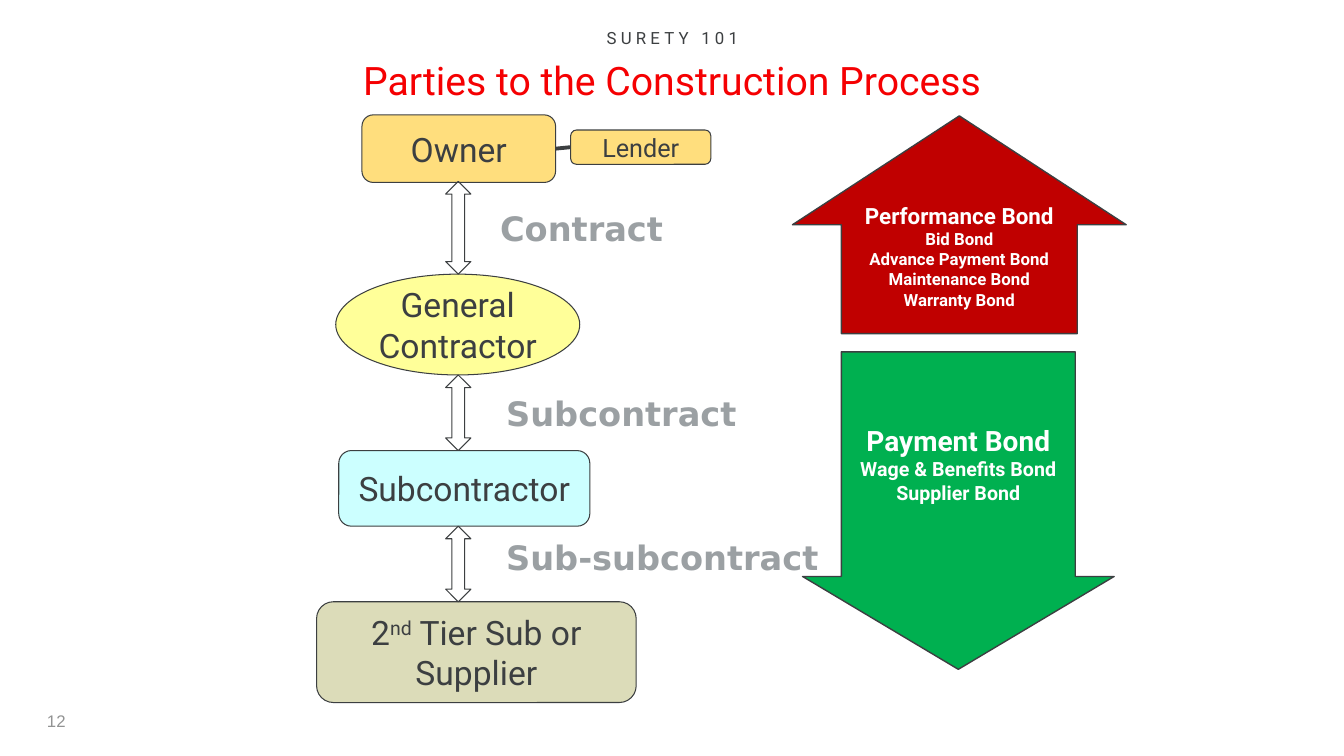
from pptx import Presentation
from pptx.dml.color import RGBColor
from pptx.enum.shapes import MSO_CONNECTOR, MSO_SHAPE as SHAPE
from pptx.enum.text import MSO_ANCHOR as ANCHOR, MSO_AUTO_SIZE, PP_ALIGN as ALIGN
from pptx.oxml.ns import qn
from pptx.util import Inches, Pt
from lxml import etree

INK = RGBColor(0x3C, 0x3F, 0x41)
GRAY = RGBColor(0x9B, 0xA0, 0xA3)
NUMBER_GRAY = RGBColor(0x92, 0x93, 0x93)
WHITE = RGBColor(0xFF, 0xFF, 0xFF)
TITLE_RED = RGBColor(0xF5, 0x00, 0x02)
GOLD = RGBColor(0xFF, 0xC0, 0x00)
YELLOW = RGBColor(0xFF, 0xFF, 0x99)
CYAN = RGBColor(0xCC, 0xFF, 0xFF)
KHAKI = RGBColor(0xC8, 0xC9, 0x91)
DARK_RED = RGBColor(0xC0, 0x00, 0x00)
GREEN = RGBColor(0x00, 0xB0, 0x50)


def write(sp, lines, color, font="Roboto", bold=False, align=ALIGN.CENTER,
          anchor=ANCHOR.MIDDLE, insets=(0, 0, 0, 0)):
    """Fill a shape with (text, size) paragraphs; insets are left, top, right, bottom."""
    tf = sp.text_frame
    tf.word_wrap, tf.auto_size, tf.vertical_anchor = True, MSO_AUTO_SIZE.NONE, anchor
    tf.margin_left, tf.margin_top, tf.margin_right, tf.margin_bottom = map(Inches, insets)
    for i, (text, size) in enumerate(lines):
        p = tf.add_paragraph() if i else tf.paragraphs[0]
        p.text, p.alignment = text, align
        for r in p.runs:
            r.font.name, r.font.size, r.font.bold = font, Pt(size), bold
            r.font.color.rgb = color


def add_outlined(kind, box, fill=None, alpha=100, adjust=(), width=0.75):
    """Add a dark-outlined shape; alpha is the opacity of its fill in percent."""
    sp = slide.shapes.add_shape(kind, *map(Inches, box))
    sp.shadow.inherit = False
    sp.line.color.rgb, sp.line.width = INK, Pt(width)
    for i, value in enumerate(adjust):
        sp.adjustments[i] = value
    if fill is None:
        sp.fill.background()
        return sp
    sp.fill.solid()
    sp.fill.fore_color.rgb = fill
    if alpha < 100:
        clr = sp._element.spPr.find(qn("a:solidFill"))[0]
        etree.SubElement(clr, qn("a:alpha")).set("val", str(alpha * 1000))
    return sp


prs = Presentation()
prs.slide_width, prs.slide_height = Inches(13.33), Inches(7.5)
slide = prs.slides.add_slide(prs.slide_layouts[5])

# Headings and page number
title = slide.shapes.title
title.left, title.top, title.width, title.height = map(Inches, (0.5, 0.51, 12.33, 0.49))
write(title, [("Parties to the Construction Process", 28)], TITLE_RED,
      anchor=ANCHOR.TOP, insets=(0.1, 0.05, 0.1, 0.05))

eyebrow = slide.shapes.add_textbox(*map(Inches, (1.42, 0.23, 10.5, 0.3)))
write(eyebrow, [("SURETY 101", 12)], INK, anchor=ANCHOR.TOP, insets=(0.1, 0.05, 0.1, 0.05))
eyebrow.text_frame.paragraphs[0].runs[0].font._element.set("spc", "300")

number = slide.shapes.add_textbox(*map(Inches, (0.25, 6.95, 0.5, 0.4)))
write(number, [("12", 12)], NUMBER_GRAY, "Arial", align=ALIGN.RIGHT,
      insets=(0.1, 0.05, 0.1, 0.05))

# Parties, from owner down to second tier
parties = [
    (SHAPE.ROUNDED_RECTANGLE, (3.59, 1.14, 1.92, 0.67), GOLD, 51, ["Owner"], 24),
    (SHAPE.OVAL, (3.33, 2.72, 2.42, 1), YELLOW, 100, ["General", "Contractor"], 24),
    (SHAPE.ROUNDED_RECTANGLE, (3.36, 4.47, 2.49, 0.75), CYAN, 100, ["Subcontractor"], 24),
    (SHAPE.ROUNDED_RECTANGLE, (3.14, 5.97, 3.17, 1), KHAKI, 63, ["2"], 24),
    (SHAPE.ROUNDED_RECTANGLE, (5.66, 1.29, 1.39, 0.34), GOLD, 51, ["Lender"], 18),
]
boxes = []
for kind, box, fill, alpha, lines, size in parties:
    sp = add_outlined(kind, box, fill, alpha)
    write(sp, [(line, size) for line in lines], INK)
    boxes.append(sp)
owner, contractor, subcontractor, second_tier, lender = boxes

p = second_tier.text_frame.paragraphs[0]
for text, baseline in [("nd", "30000"), (" Tier Sub or Supplier", "0")]:
    r = p.add_run()
    r.text = text
    r.font.name, r.font.size, r.font.color.rgb = "Roboto", Pt(24), INK
    r.font._element.set("baseline", baseline)

loan = slide.shapes.add_connector(MSO_CONNECTOR.STRAIGHT, 0, 0, 0, 0)
loan.begin_connect(owner, 3)
loan.end_connect(lender, 1)
loan.line.color.rgb, loan.line.width = INK, Pt(2.75)
etree.SubElement(loan._element.spPr, qn("a:effectLst"))

# Agreements between neighbouring parties
agreements = [
    ("Contract", 1.8, 0.92, (4.96, 2.06, 1.97, 0.4)),
    ("Subcontract", 3.72, 0.75, (5.02, 3.9, 2.65, 0.4)),
    ("Sub-subcontract", 5.22, 0.75, (5.02, 5.33, 4.01, 0.4)),
]
for text, top, height, box in agreements:
    add_outlined(SHAPE.UP_DOWN_ARROW, (4.42, top, 0.25, height), adjust=(0.5, 0.5))
    label = slide.shapes.add_textbox(*map(Inches, box))
    write(label, [(text, 24)], GRAY, "DejaVu Sans", True, ALIGN.LEFT, ANCHOR.BOTTOM)

# Bonds
bonds = [
    (SHAPE.UP_ARROW, (7.86, 1.15, 3.31, 2.16), DARK_RED, (0.707, 0.5), 0.2,
     [("Performance Bond", 16), ("Bid Bond", 12), ("Advance Payment Bond", 12),
      ("Maintenance Bond", 12), ("Warranty Bond", 12)]),
    (SHAPE.DOWN_ARROW, (7.96, 3.49, 3.09, 3.15), GREEN, (0.751, 0.298), 0.28,
     [("Payment Bond", 20), ("Wage & Benefits Bond", 14), ("Supplier Bond", 14)]),
]
for kind, box, fill, adjust, bottom, lines in bonds:
    arrow = add_outlined(kind, box, fill, adjust=adjust, width=1)
    write(arrow, lines, WHITE, bold=True, insets=(0.1, 0.05, 0.1, bottom))

prs.save("out.pptx")
